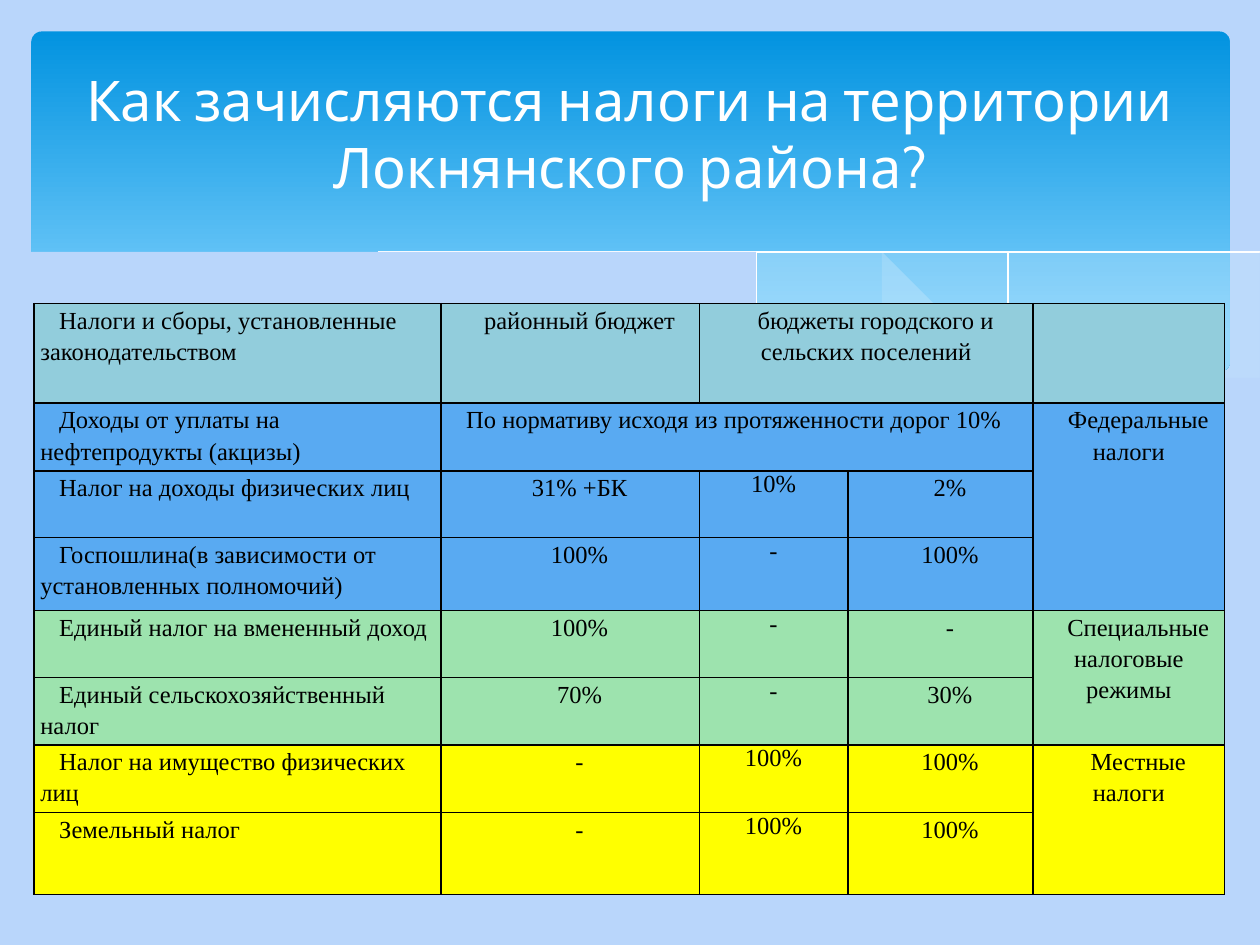
import pptx
import pptx.util
import pptx.dml.color
import pptx.enum.shapes
import pptx.enum.text
import pptx.oxml.ns
from lxml import etree

Inches = pptx.util.Inches
Pt = pptx.util.Pt
RGBColor = pptx.dml.color.RGBColor
CENTER = pptx.enum.text.PP_ALIGN.CENTER
LEFT = pptx.enum.text.PP_ALIGN.LEFT
qn = pptx.oxml.ns.qn

BACKGROUND = RGBColor(0xB9, 0xD6, 0xFB)
BANNER_TOP = RGBColor(0x02, 0x93, 0xE0)
BANNER_BOTTOM = RGBColor(0x83, 0xD3, 0xFE)
WAVE = RGBColor(0xC6, 0xE7, 0xFC)
WHITE = RGBColor(0xFF, 0xFF, 0xFF)
BLACK = RGBColor(0, 0, 0)
HEADER = RGBColor(0x92, 0xCD, 0xDC)
FEDERAL = RGBColor(0x59, 0xAA, 0xF2)
SPECIAL = RGBColor(0x9D, 0xE3, 0xAE)
LOCAL = RGBColor(0xFF, 0xFF, 0x00)

# Each wave edge is a list of key points in inches
RIGHT_WAVE_TOP = [(9.76, 1.99), (9.35, 2.07), (8.61, 2.23), (7.79, 2.42), (7.06, 2.57), (6.61, 2.65)]
RIGHT_WAVE_BOTTOM = [(6.61, 2.65), (7.05, 2.71), (7.57, 2.76), (8.03, 2.78), (8.54, 2.76),
                     (9.05, 2.69), (9.42, 2.59), (9.76, 2.47)]
MIDDLE_WAVE_TOP = [(8.93, 2.73), (8.07, 2.6), (7.06, 2.4), (6.29, 2.22), (5.55, 2.05), (4.89, 1.94),
                   (4.2, 1.87), (3.61, 1.86), (2.86, 1.91)]
MIDDLE_WAVE_BOTTOM = [(2.86, 1.91), (3.62, 2.03), (4.49, 2.22), (5.3, 2.4), (6.01, 2.55), (6.8, 2.68),
                      (7.48, 2.76), (8.07, 2.78), (8.57, 2.77), (8.93, 2.73)]
FALLING_LINE = [(3.09, 1.95), (3.44, 1.9), (4.01, 1.87), (4.69, 1.89), (5.56, 1.97), (6.36, 2.08),
                (7.27, 2.26), (8.31, 2.51), (9.07, 2.72)]
RISING_LINE = [(6.13, 2.57), (6.95, 2.35), (7.76, 2.16), (8.66, 1.99), (9.24, 1.9), (9.75, 1.85)]
FRONT_WAVE_TOP = [(9.77, 2.46), (9.2, 2.65), (8.63, 2.74), (8.09, 2.77), (7.44, 2.74), (6.68, 2.65),
                  (5.79, 2.5), (4.47, 2.2), (3.39, 1.97), (2.5, 1.86), (1.77, 1.84), (1.19, 1.87),
                  (0.67, 1.97), (0.23, 2.13)]
FRONT_WAVE_BASE = [(0.23, 3.29), (9.77, 3.29)]

COLUMN_WIDTHS = [3.23, 2.05, 1.18, 1.47, 1.52]
ROW_HEIGHTS = [0.79, 0.53, 0.53, 0.58, 0.53, 0.53, 0.53, 0.65]
ROW_COLORS = [HEADER] + [FEDERAL] * 3 + [SPECIAL] * 2 + [LOCAL] * 2
TAX_ROWS = [
    ["Налоги и сборы, установленные законодательством", "районный бюджет",
     "бюджеты городского и сельских поселений", "", ""],
    ["Доходы от уплаты на нефтепродукты (акцизы)",
     "По нормативу исходя из протяженности дорог 10%", "", "", "Федеральные налоги"],
    ["Налог на доходы физических лиц", "31% +БК", "10%", "2%", ""],
    ["Госпошлина(в зависимости от установленных полномочий)", "100%", "-", "100%", ""],
    ["Единый налог на вмененный доход", "100%", "-", "-", "Специальные налоговые режимы"],
    ["Единый сельскохозяйственный налог", "70%", "-", "30%", ""],
    ["Налог на имущество физических лиц", "-", "100%", "100%", "Местные налоги"],
    ["Земельный налог", "-", "100%", "100%", ""],
]
# First and last cell (row, column) of each merged area
MERGES = [((0, 2), (0, 3)), ((1, 1), (1, 3)), ((1, 4), (3, 4)), ((4, 4), (5, 4)), ((6, 4), (7, 4))]


def smooth(knots, steps=5):
    """Catmull-Rom curve through the key points."""
    padded = [knots[0]] + knots + [knots[-1]]
    curve = [knots[0]]
    for a, b, c, d in zip(padded, padded[1:], padded[2:], padded[3:]):
        for step in range(1, steps + 1):
            t = step / steps
            curve.append(tuple(
                b[i] + t / 2 * (c[i] - a[i] + t * (2 * a[i] - 5 * b[i] + 4 * c[i] - d[i]
                                + t * (3 * b[i] - a[i] - 3 * c[i] + d[i])))
                for i in (0, 1)))
    return curve


def add_outline(slide, points, close):
    builder = slide.shapes.build_freeform(*points[0], scale=Inches(1))
    builder.add_line_segments(points[1:], close=close)
    outline = builder.convert_to_shape()
    outline.shadow.inherit = False
    return outline


def add_wave(slide, points, color, opacity=100):
    wave = add_outline(slide, points, True)
    wave.fill.solid()
    wave.fill.fore_color.rgb = color
    wave.line.fill.background()
    if opacity < 100:
        rgb = wave.fill._xPr.find(".//" + qn("a:srgbClr"))
        etree.SubElement(rgb, qn("a:alpha")).set("val", str(opacity * 1000))


def add_wave_line(slide, knots):
    wave_line = add_outline(slide, smooth(knots), False)
    wave_line.fill.background()
    wave_line.line.color.rgb = WHITE
    wave_line.line.width = Pt(0)


def add_banner(slide):
    banner = slide.shapes.add_shape(pptx.enum.shapes.MSO_SHAPE.ROUNDED_RECTANGLE,
                                    Inches(0.25), Inches(0.25), Inches(9.51), Inches(2.7))
    banner.adjustments[0] = 0.03
    banner.shadow.inherit = False
    banner.line.fill.background()
    banner.fill.gradient()
    banner.fill.gradient_angle = 270
    stops = ((0, BANNER_TOP), (0.9, BANNER_BOTTOM))
    for stop, (position, color) in zip(banner.fill.gradient_stops, stops):
        stop.position = position
        stop.color.rgb = color


def format_runs(paragraph, font_name, size, color):
    for run in paragraph.runs:
        run.font.name = font_name
        run.font.size = Pt(size)
        run.font.color.rgb = color


def add_title(slide, text):
    title = slide.shapes.add_textbox(Inches(0.5), Inches(0.37), Inches(9), Inches(1.37))
    title.text_frame.word_wrap = True
    title.text_frame.vertical_anchor = pptx.enum.text.MSO_ANCHOR.MIDDLE
    title.text_frame.text = text
    paragraph = title.text_frame.paragraphs[0]
    paragraph.alignment = CENTER
    format_runs(paragraph, "Cabin", 32, WHITE)


def set_borders(cell):
    properties = cell._tc.get_or_add_tcPr()
    for index, side in enumerate(("a:lnL", "a:lnR", "a:lnT", "a:lnB")):
        border = etree.Element(qn(side), w=str(Pt(1)))
        border_fill = etree.SubElement(border, qn("a:solidFill"))
        etree.SubElement(border_fill, qn("a:srgbClr"), val=str(BLACK))
        properties.insert(index, border)


def fill_cell(cell, text, color, alignment, indented):
    cell.margin_left = cell.margin_right = Inches(0.05)
    cell.margin_top = cell.margin_bottom = 0
    cell.fill.solid()
    cell.fill.fore_color.rgb = color
    set_borders(cell)
    cell.text_frame.text = text
    paragraph = cell.text_frame.paragraphs[0]
    paragraph.alignment = alignment
    if indented:
        paragraph.line_spacing = 1.15
        paragraph._p.get_or_add_pPr().set("indent", str(Inches(0.15)))
    format_runs(paragraph, "Times New Roman", 14, BLACK)


def add_tax_table(slide):
    frame = slide.shapes.add_table(len(ROW_HEIGHTS), len(COLUMN_WIDTHS), Inches(0.27), Inches(2.41),
                                   Inches(sum(COLUMN_WIDTHS)), Inches(sum(ROW_HEIGHTS)))
    taxes = frame.table
    taxes.first_row = taxes.horz_banding = False
    for column, width in zip(taxes.columns, COLUMN_WIDTHS):
        column.width = Inches(width)
    for row, height in zip(taxes.rows, ROW_HEIGHTS):
        row.height = Inches(height)
    for first, last in MERGES:
        taxes.cell(*first).merge(taxes.cell(*last))
    for r, (texts, color) in enumerate(zip(TAX_ROWS, ROW_COLORS)):
        for c, text in enumerate(texts):
            alignment = LEFT if c == 0 or (r, c) == (1, 1) else CENTER
            fill_cell(taxes.cell(r, c), text, color, alignment, c != 2 or r == 0)


def main():
    deck = pptx.Presentation()
    deck.slide_width, deck.slide_height = Inches(10), Inches(7.5)
    slide = deck.slides.add_slide(deck.slide_layouts[6])
    slide.background.fill.solid()
    slide.background.fill.fore_color.rgb = BACKGROUND

    # Banner with waves
    add_banner(slide)
    add_wave(slide, smooth(RIGHT_WAVE_TOP) + smooth(RIGHT_WAVE_BOTTOM), WAVE, 29)
    add_wave(slide, smooth(MIDDLE_WAVE_TOP) + smooth(MIDDLE_WAVE_BOTTOM), WAVE, 40)
    add_wave_line(slide, FALLING_LINE)
    add_wave_line(slide, RISING_LINE)
    add_wave(slide, smooth(FRONT_WAVE_TOP) + FRONT_WAVE_BASE, BACKGROUND)

    # Title and table of taxes
    add_title(slide, "Как зачисляются налоги на территории Локнянского района?")
    add_tax_table(slide)
    deck.save("out.pptx")


if __name__ == "__main__":
    main()
